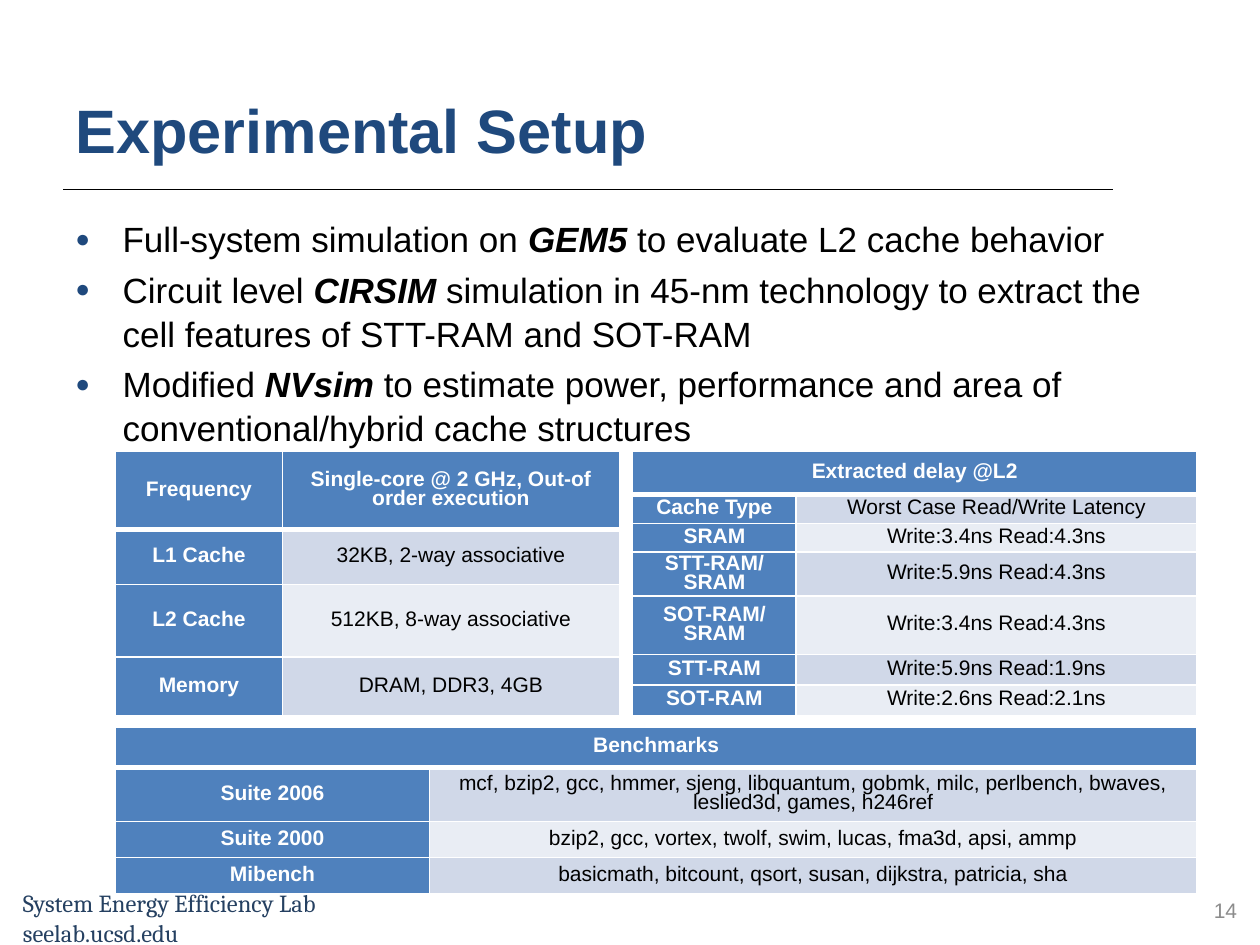
from lxml import etree
from pptx import Presentation
from pptx.dml.color import RGBColor
from pptx.enum import shapes, text
from pptx.oxml.ns import qn
from pptx.util import Pt

NAVY = RGBColor(0x1F, 0x49, 0x7D)
FOOTER_NAVY = RGBColor(0x25, 0x40, 0x61)
GRAY = RGBColor(0x8C, 0x8C, 0x8C)
BLACK = RGBColor(0, 0, 0)
WHITE = RGBColor(0xFF, 0xFF, 0xFF)
HEADER_BLUE = RGBColor(0x4F, 0x81, 0xBD)
BANDS = RGBColor(0xD0, 0xD8, 0xE8), RGBColor(0xE9, 0xED, 0xF4)

# Each bullet: text before, emphasised tool, text after
BULLETS = [
    ("Full-system simulation on ", "GEM5", " to evaluate L2 cache behavior"),
    ("Circuit level ", "CIRSIM", " simulation in 45-nm technology to extract "
     "the cell features of STT-RAM and SOT-RAM"),
    ("Modified ", "NVsim", " to estimate power, performance and area of "
     "conventional/hybrid cache structures"),
]
BENCHMARKS = [
    ("Benchmarks", None),
    ("Suite 2006", "mcf, bzip2, gcc, hmmer, sjeng, libquantum, gobmk, milc, "
     "perlbench, bwaves, leslied3d, games, h246ref"),
    ("Suite 2000", "bzip2, gcc, vortex, twolf, swim, lucas, fma3d, apsi, ammp"),
    ("Mibench", "basicmath, bitcount, qsort, susan, dijkstra, patricia, sha"),
]
SYSTEM = [
    ("Frequency", "Single-core @ 2 GHz, Out-of order execution"),
    ("L1 Cache", "32KB, 2-way associative"),
    ("L2 Cache", "512KB, 8-way associative"),
    ("Memory", "DRAM, DDR3, 4GB"),
]
DELAYS = [
    ("Extracted delay @L2", None),
    ("Cache Type", "Worst Case Read/Write Latency"),
    ("SRAM", "Write:3.4ns Read:4.3ns"),
    ("STT-RAM/SRAM", "Write:5.9ns Read:4.3ns"),
    ("SOT-RAM/SRAM", "Write:3.4ns Read:4.3ns"),
    ("STT-RAM", "Write:5.9ns Read:1.9ns"),
    ("SOT-RAM", "Write:2.6ns Read:2.1ns"),
]


def style_font(font, size, color, bold=False, name="Arial"):
    font.name, font.size, font.bold = name, Pt(size), bold
    font.color.rgb = color


def add_text_frame(slide, box, anchor=text.MSO_ANCHOR.TOP):
    frame = slide.shapes.add_textbox(*map(Pt, box)).text_frame
    frame.word_wrap = True
    frame.vertical_anchor = anchor
    return frame


def add_title(slide, box):
    frame = add_text_frame(slide, box, text.MSO_ANCHOR.BOTTOM)
    frame.text = "Experimental Setup"
    style_font(frame.paragraphs[0].font, 35, NAVY, bold=True)


def add_title_rule(slide, left, top, width):
    rule = slide.shapes.add_connector(
        shapes.MSO_CONNECTOR.STRAIGHT, Pt(left), Pt(top), Pt(left + width), Pt(top))
    rule.line.color.rgb = BLACK
    rule.line.width = Pt(0.5)
    etree.SubElement(rule._element.spPr, qn("a:effectLst"))


def add_bullet_mark(paragraph, indent):
    props = paragraph._p.get_or_add_pPr()
    props.set("marL", str(Pt(indent)))
    props.set("indent", str(-Pt(indent)))
    color = etree.SubElement(props, qn("a:buClr"))
    etree.SubElement(color, qn("a:srgbClr"), val=str(NAVY))
    etree.SubElement(props, qn("a:buSzPct"), val="70000")
    etree.SubElement(props, qn("a:buFont"), typeface="Arial")
    etree.SubElement(props, qn("a:buChar"), char="●")


def add_bullets(slide, box):
    frame = add_text_frame(slide, box)
    for index, (before, tool, after) in enumerate(BULLETS):
        paragraph = frame.add_paragraph() if index else frame.paragraphs[0]
        add_bullet_mark(paragraph, 27)
        paragraph.line_spacing = 1.04
        paragraph.space_before = Pt(4 if index else 0)
        style_font(paragraph.font, 20, BLACK)
        for part in (before, tool, after):
            run = paragraph.add_run()
            run.text = part
            if part == tool:
                run.font.bold = run.font.italic = True


def set_borders(cell, bottom):
    props = cell._tc.get_or_add_tcPr()
    for side, width in (("L", 1), ("R", 1), ("T", 1), ("B", bottom)):
        line = etree.SubElement(props, qn(f"a:ln{side}"), w=str(Pt(width)))
        fill = etree.SubElement(line, qn("a:solidFill"))
        etree.SubElement(fill, qn("a:srgbClr"), val=str(WHITE))


def fill_cell(cell, content, row, is_header, gap):
    set_borders(cell, bottom=1 if row else 3)
    cell.fill.solid()
    cell.fill.fore_color.rgb = HEADER_BLUE if is_header else BANDS[(row - 1) % 2]
    cell.margin_left = cell.margin_right = Pt(5)
    cell.margin_top = cell.margin_bottom = 0
    cell.vertical_anchor = text.MSO_ANCHOR.MIDDLE
    cell.text = content or ""
    paragraph = cell.text_frame.paragraphs[0]
    paragraph.alignment = text.PP_ALIGN.CENTER
    paragraph.line_spacing = 0.8
    paragraph.space_before = Pt(0)
    paragraph.space_after = Pt(gap)
    style_font(paragraph.font, 12, WHITE if is_header else BLACK, is_header)


def add_setup_table(slide, left, top, widths, heights, rows, gap=0):
    """Header row and header column in blue; a row without a value is merged."""
    table = slide.shapes.add_table(
        len(rows), len(widths), Pt(left), Pt(top),
        Pt(sum(widths)), Pt(sum(heights))).table
    table.first_col = True
    for column, width in zip(table.columns, widths):
        column.width = Pt(width)
    for r, (values, height) in enumerate(zip(rows, heights)):
        table.rows[r].height = Pt(height)
        for c, content in enumerate(values):
            fill_cell(table.cell(r, c), content, r, r == 0 or c == 0, gap)
        if values[1] is None:
            table.cell(r, 0).merge(table.cell(r, 1))


def add_footer(slide, lab_box, number_box):
    lab = add_text_frame(slide, lab_box)
    lab.text = "System Energy Efficiency Lab\nseelab.ucsd.edu"
    for paragraph in lab.paragraphs:
        style_font(paragraph.font, 14, FOOTER_NAVY, name="Cambria")
    number = add_text_frame(slide, number_box, text.MSO_ANCHOR.MIDDLE)
    number.text = "14"
    number.paragraphs[0].alignment = text.PP_ALIGN.RIGHT
    style_font(number.paragraphs[0].font, 12, GRAY)


def main():
    deck = Presentation()
    deck.slide_width, deck.slide_height = Pt(720), Pt(540)
    slide = deck.slides.add_slide(deck.slide_layouts[6])

    # Heading and bullets
    add_title_rule(slide, 36, 108, 600)
    add_title(slide, (36, 30, 594, 68.5))
    add_bullets(slide, (36, 120, 648, 372))
    add_footer(slide, (6, 504, 228, 41), (546, 505.5, 168, 29))

    # Benchmarks below, system and delay tables side by side
    add_setup_table(slide, 66, 415.5, (179.5, 438.5),
                    (23, 31, 20.5, 20.5), BENCHMARKS, gap=2)
    add_setup_table(slide, 66, 258, (95.5, 192.5),
                    (44.5, 31.5, 41.5, 33.5), SYSTEM)
    add_setup_table(slide, 361.5, 258, (93.5, 229),
                    (24.5, 16.5, 16.5, 25, 33.5, 17.5, 17.5), DELAYS, gap=2)

    deck.save("out.pptx")


if __name__ == "__main__":
    main()
